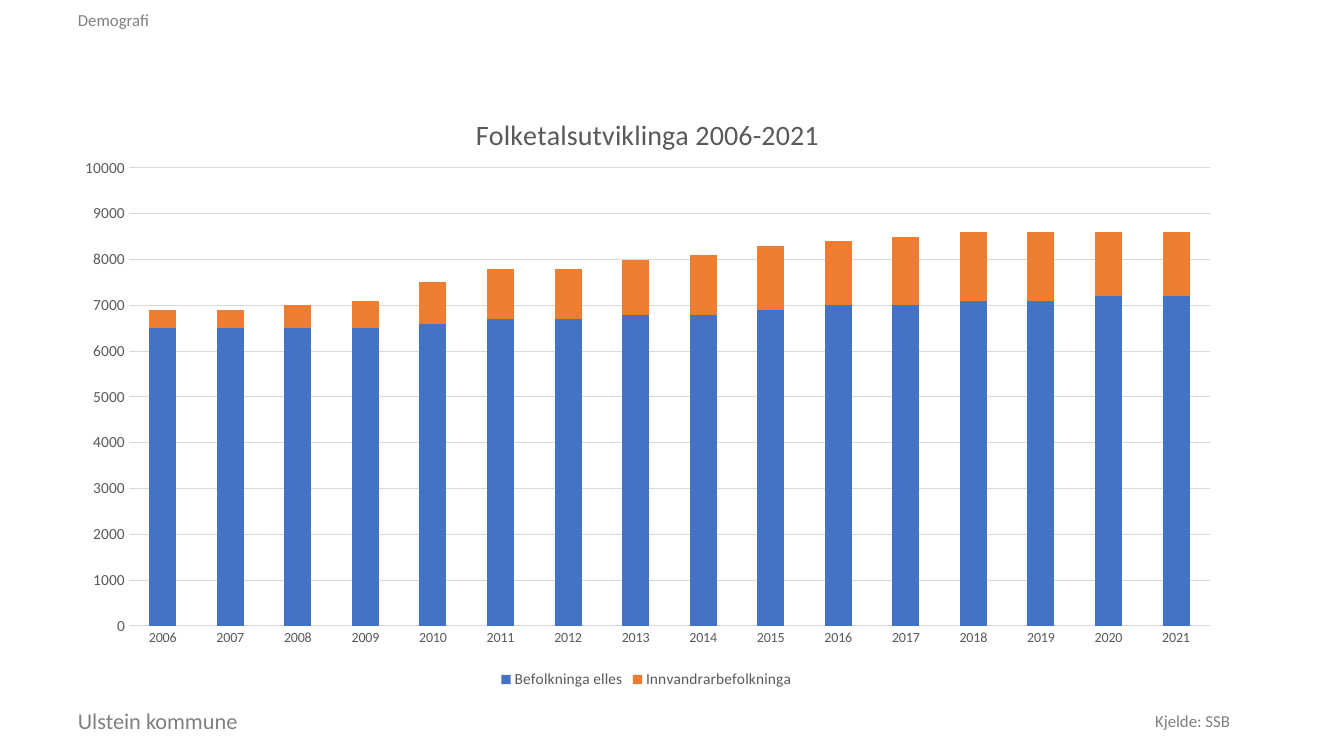
from lxml import etree
from pptx import Presentation
from pptx import util as u
from pptx.chart.data import CategoryChartData
from pptx.dml.color import RGBColor
from pptx.enum import chart as ec, text
from pptx.oxml.ns import qn

EMU_PER_PX = 914400 / 100.8
FONT = "Calibri"
GREY, DARK, GRID = "808080", "595959", "D9D9D9"

YEARS = [str(year) for year in range(2006, 2022)]
POPULATION = {
    "Befolkninga elles": ("4472C4", [
        6500, 6500, 6500, 6500, 6600, 6700, 6700, 6800,
        6800, 6900, 7000, 7000, 7100, 7100, 7200, 7200]),
    "Innvandrarbefolkninga": ("ED7D31", [
        400, 400, 500, 600, 900, 1100, 1100, 1200,
        1300, 1400, 1400, 1500, 1500, 1500, 1400, 1400]),
}


def px(n):
    return u.Emu(round(n * EMU_PER_PX))


def rgb(value):
    return RGBColor.from_string(value)


def style(font, size, color):
    font.name, font.size, font.bold = FONT, u.Pt(size), False
    font.color.rgb = rgb(color)


def add_text(s, box, content, size=12, color=GREY, align=text.PP_ALIGN.LEFT):
    tf = s.shapes.add_textbox(*map(px, box)).text_frame
    tf.word_wrap = True
    tf.vertical_anchor = text.MSO_ANCHOR.MIDDLE
    p = tf.paragraphs[0]
    p.alignment = align
    r = p.add_run()
    r.text = content
    style(r.font, size, color)


def set_line(line, color):
    line.color.rgb = rgb(color)
    line.width = u.Pt(0.75)


def set_layout(parent, index, **values):
    """Give a chart part a manual layout, in fractions of the chart."""
    for old in parent.findall(qn("c:layout")):
        parent.remove(old)
    layout = etree.Element(qn("c:layout"))
    manual = etree.SubElement(layout, qn("c:manualLayout"))
    for tag, value in values.items():
        etree.SubElement(manual, qn("c:" + tag)).set("val", str(value))
    parent.insert(index, layout)


def header(s, left, top, width, height):
    add_text(s, (left, top, width, height), "Demografi")


def footer(s, left, top, width, height):
    name_width, source_width = 364, 413
    add_text(s, (left, top, name_width, height), "Ulstein kommune", size=16)
    add_text(s, (left + width - source_width, top, source_width, height),
             "Kjelde: SSB", align=text.PP_ALIGN.RIGHT)


def population_chart(s, left, top, width, height):
    data = CategoryChartData(number_format="General")
    data.categories = YEARS
    for name, (_, values) in POPULATION.items():
        data.add_series(name, values)
    chart = s.shapes.add_chart(
        ec.XL_CHART_TYPE.COLUMN_STACKED,
        *map(px, (left, top, width, height)), data).chart
    style(chart.font, 10, "000000")

    # Title
    chart.has_title = True
    p = chart.chart_title.text_frame.paragraphs[0]
    r = p.add_run()
    r.text = "Folketalsutviklinga 2006-2021"
    style(r.font, 20, DARK)

    # Columns
    plot = chart.plots[0]
    plot.gap_width, plot.overlap = 150, 100
    plot.vary_by_categories = False
    for series, (color, _) in zip(plot.series, POPULATION.values()):
        series.format.fill.solid()
        series.format.fill.fore_color.rgb = rgb(color)

    # Axes
    years, people = chart.category_axis, chart.value_axis
    for axis, size in ((years, 10), (people, 11)):
        axis.major_tick_mark = axis.minor_tick_mark = ec.XL_TICK_MARK.NONE
        style(axis.tick_labels.font, size, DARK)
    set_line(years.format.line, GRID)
    people.format.line.fill.background()
    people.minimum_scale, people.maximum_scale = 0, 10000
    people.major_unit = 1000
    people.has_major_gridlines = True
    set_line(people.major_gridlines.format.line, GRID)

    # Legend
    chart.has_legend = True
    chart.legend.position = ec.XL_LEGEND_POSITION.BOTTOM
    chart.legend.include_in_layout = False
    style(chart.legend.font, 11, DARK)

    # Room for the title above the plot
    c = chart.element.find(qn("c:chart"))
    set_layout(c.find(qn("c:title")), 1,
               xMode="edge", yMode="edge", x=0.35, y=0.04)
    set_layout(c.find(qn("c:plotArea")), 0, layoutTarget="inner",
               xMode="edge", yMode="edge",
               x=round(68 / width, 4), y=round(83 / height, 4),
               w=round(1081 / width, 4), h=round(458 / height, 4))


def main():
    prs = Presentation()
    prs.slide_width, prs.slide_height = px(1344), px(756)
    s = prs.slides.add_slide(prs.slide_layouts[6])
    footer(s, 68, 701, 1172, 40)
    header(s, 68, 0, 339, 40)
    population_chart(s, 61, 85, 1171, 608)
    prs.save("out.pptx")


if __name__ == "__main__":
    main()
